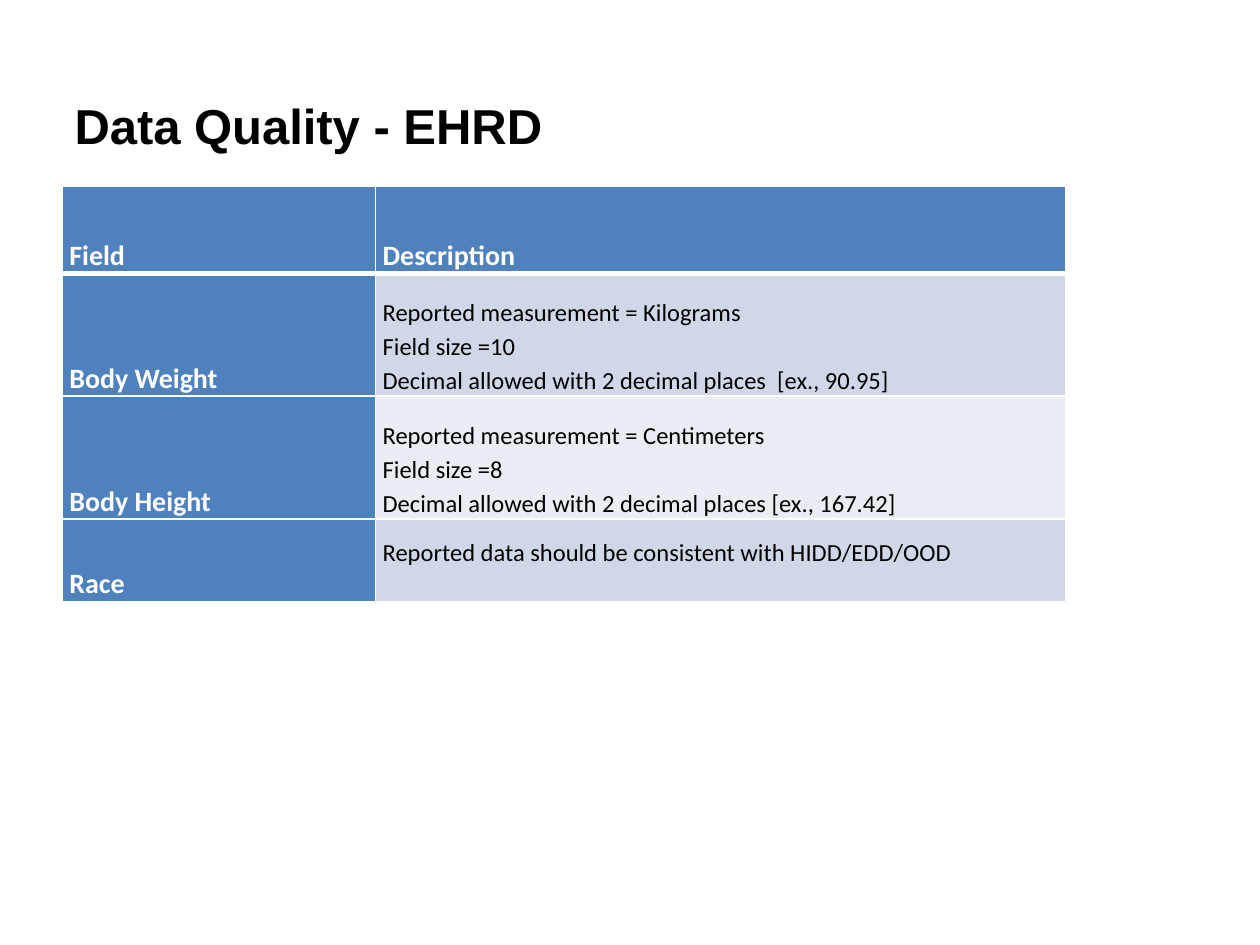
from dataclasses import dataclass

from lxml.etree import SubElement
from pptx import Presentation
from pptx.dml.color import RGBColor
from pptx.enum.text import MSO_ANCHOR as Anchor
from pptx.oxml.ns import qn
from pptx.util import Pt


@dataclass(frozen=True)
class Theme:
    blue: str = "4F81BD"
    bands: tuple = ("D0D8E8", "E9EDF4")
    white: str = "FFFFFF"
    black: str = "000000"
    title_font: str = "Arial"
    table_font: str = "Calibri"
    title_size: int = 28
    label_size: int = 16
    detail_size: int = 14


theme = Theme()


def style_font(font, name, size, color, bold):
    font.name, font.size, font.bold = name, Pt(size), bold
    font.color.rgb = RGBColor.from_string(color)


def add_borders(cell, widths):
    """Draw white cell borders; widths are points for left, right, top, bottom."""
    properties = cell._tc.get_or_add_tcPr()
    for side, width in zip("LRTB", widths):
        line = SubElement(properties, qn(f"a:ln{side}"), w=str(Pt(width)))
        fill = SubElement(line, qn("a:solidFill"))
        SubElement(fill, qn("a:srgbClr"), val=theme.white)


deck = Presentation()
deck.slide_width, deck.slide_height = Pt(720), Pt(540)
page = deck.slides.add_slide(deck.slide_layouts[6])

# Title
title = page.shapes.add_textbox(Pt(35.5), Pt(30), Pt(633), Pt(83)).text_frame
title.word_wrap = True
title.vertical_anchor = Anchor.MIDDLE
title.text = "Data Quality - EHRD"
style_font(title.paragraphs[0].runs[0].font, theme.title_font,
           theme.title_size, theme.black, True)

# Field table
rows = [
    ("Field", "Description"),
    ("Body Weight", "Reported measurement = Kilograms\nField size =10\n"
                    "Decimal allowed with 2 decimal places  [ex., 90.95]"),
    ("Body Height", "Reported measurement = Centimeters\nField size =8\n"
                    "Decimal allowed with 2 decimal places [ex., 167.42]"),
    ("Race", "Reported data should be consistent with HIDD/EDD/OOD"),
]
column_widths = [179, 394.5]
row_heights = [49.5, 70.3, 70.3, 47]
table = page.shapes.add_table(
    len(rows), len(column_widths), Pt(35.7), Pt(106.6),
    Pt(sum(column_widths)), Pt(sum(row_heights))).table
for column, width in zip(table.columns, column_widths):
    column.width = Pt(width)

for r, texts in enumerate(rows):
    table.rows[r].height = Pt(row_heights[r])
    for c, text in enumerate(texts):
        cell = table.cell(r, c)
        is_label = r == 0 or c == 0
        add_borders(cell, (1, 1, 3 if r == 1 else 1, 3 if r == 0 else 1))
        cell.fill.solid()
        fill = theme.blue if is_label else theme.bands[(r - 1) % 2]
        cell.fill.fore_color.rgb = RGBColor.from_string(fill)
        cell.vertical_anchor = Anchor.BOTTOM
        cell.margin_left = cell.margin_right = Pt(4)
        cell.margin_top = cell.margin_bottom = 0
        cell.text_frame.text = text
        for para in cell.text_frame.paragraphs:
            para.line_spacing = 1.15
            size = theme.label_size if is_label else theme.detail_size
            color = theme.white if is_label else theme.black
            style_font(para.runs[0].font, theme.table_font, size, color, is_label)

# The race description sits one line above the bottom of its row
table.cell(3, 1).margin_bottom = Pt(19)

deck.save("out.pptx")
